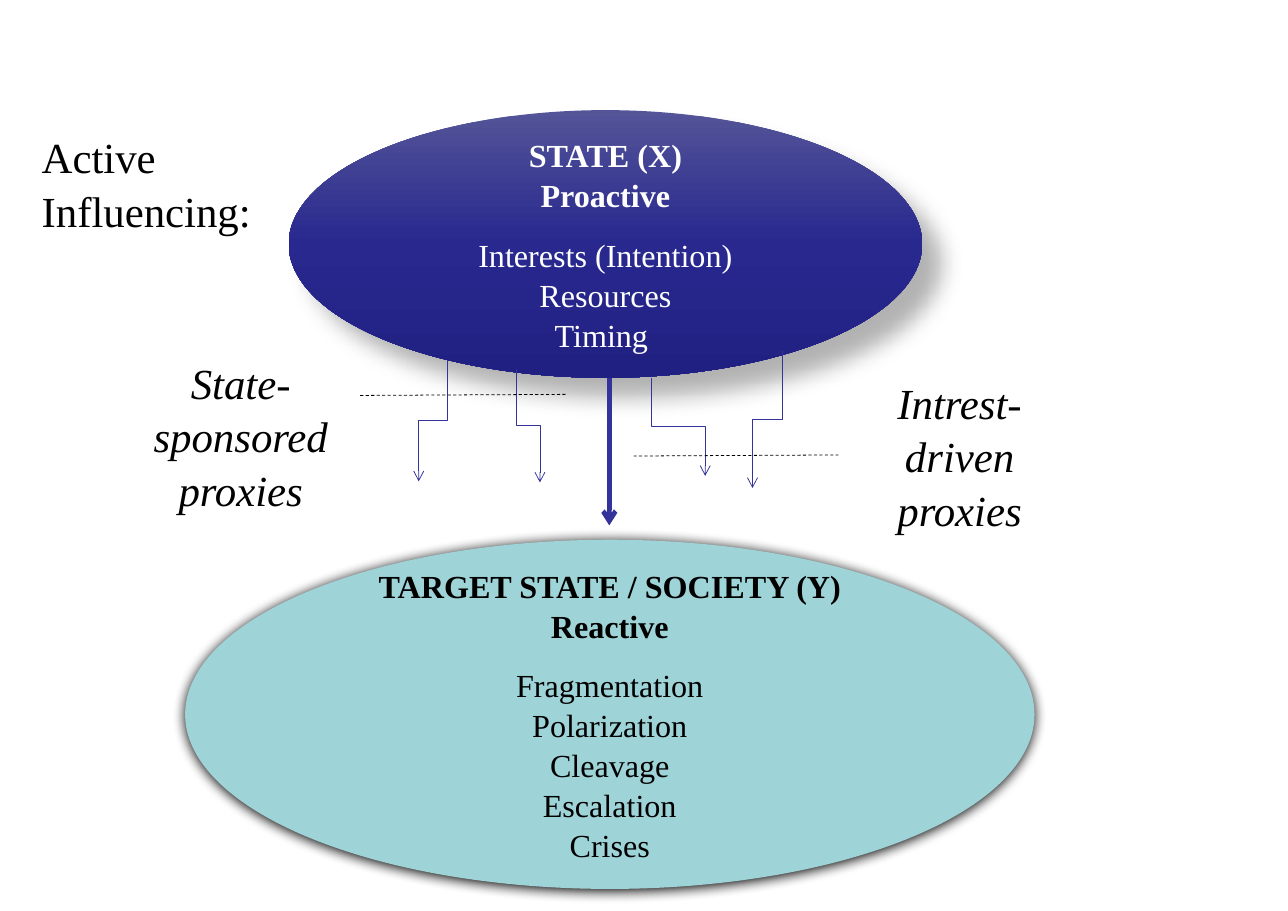
from lxml import etree
from pptx import Presentation
from pptx.dml.color import RGBColor
from pptx.enum.dml import MSO_LINE
from pptx.enum.shapes import MSO_CONNECTOR, MSO_SHAPE
from pptx.enum.text import MSO_ANCHOR, PP_ALIGN
from pptx.oxml.ns import qn
from pptx.util import Emu, Pt

PX = 9144
FONT = "Times New Roman"
BLUE, BLACK, WHITE, TEAL = "333399", "000000", "FFFFFF", "9ED3D7"
LEFT, CENTER = PP_ALIGN.LEFT, PP_ALIGN.CENTER
MIDDLE, TOP = MSO_ANCHOR.MIDDLE, MSO_ANCHOR.TOP
LINE, ELBOW = MSO_CONNECTOR.STRAIGHT, MSO_CONNECTOR.ELBOW
OVAL, DASH = MSO_SHAPE.OVAL, MSO_LINE.DASH


def px(*vals):
    """Turn px lengths into EMU."""
    return [Emu(int(val * PX)) for val in vals]


def paint(color, code):
    """Set a colour from a hex string."""
    color.rgb = RGBColor.from_string(code)


def write(par, text, size, code, bold=False, italic=False, align=CENTER):
    """Add one styled run to a paragraph."""
    par.alignment = align
    par.line_spacing = 1.04
    run = par.add_run()
    run.text = text
    font = run.font
    font.name, font.size = FONT, Pt(size)
    font.bold, font.italic = bold, italic
    paint(font.color, code)


def label(slide, box, text, italic=True, align=CENTER):
    """Add a wrapped text box."""
    frame = slide.shapes.add_textbox(*px(*box)).text_frame
    frame.word_wrap = True
    frame.vertical_anchor = TOP
    write(frame.paragraphs[0], text, 28, BLACK, italic=italic, align=align)


def shade(shape, alpha, blur, dist, angle):
    """Give a shape a soft black outer shadow."""
    shape.shadow.inherit = False
    effects = shape.element.spPr.find(qn("a:effectLst"))
    outer = etree.SubElement(effects, qn("a:outerShdw"), blurRad=str(Pt(blur)),
                             dist=str(Pt(dist)), dir=str(angle * 60000),
                             algn="ctr", rotWithShape="0")
    color = etree.SubElement(outer, qn("a:srgbClr"), val=BLACK)
    etree.SubElement(color, qn("a:alpha"), val=str(alpha * 1000))


def fade(fill, codes):
    """Fill from top to bottom through evenly spaced colours."""
    fill.gradient()
    fill.gradient_angle = 270
    stops = fill.gradient_stops
    root = etree.Element(qn("a:gsLst"))
    for num, code in enumerate(codes):
        stop = etree.SubElement(root, qn("a:gs"),
                                pos=str(num * 100000 // (len(codes) - 1)))
        etree.SubElement(stop, qn("a:srgbClr"), val=code)
    stops._gsLst[:] = root[:]


def oval(slide, box, heads, items, code):
    """Add an ellipse with bold heads above plain items."""
    shape = slide.shapes.add_shape(OVAL, *px(*box))
    shape.line.fill.background()
    frame = shape.text_frame
    frame.word_wrap = True
    frame.vertical_anchor = MIDDLE
    for num, text in enumerate(heads + items):
        par = frame.add_paragraph() if num else frame.paragraphs[0]
        write(par, text, 21, code, bold=num < len(heads))
        if num == len(heads):
            par.space_before = Pt(12.6)
    return shape


def link(slide, kind, ends, code, width, dash=None, arrow=False):
    """Add a plain connector."""
    line = slide.shapes.add_connector(kind, *px(*ends))
    paint(line.line.color, code)
    line.line.width = Pt(width)
    if dash:
        line.line.dash_style = dash
    props = line.element.spPr
    if arrow:
        etree.SubElement(props.find(qn("a:ln")), qn("a:tailEnd"), type="arrow")
    etree.SubElement(props, qn("a:effectLst"))
    return line


def bend(slide, x1, y1, x2, y2):
    """Add an elbow arrow that leaves and arrives vertically."""
    midx, midy = (x1 + x2) / 2, (y1 + y2) / 2
    long, wide = (y2 - y1) / 2, abs(x2 - x1) / 2
    ends = midx - long, midy - wide, midx + long, midy + wide
    line = link(slide, ELBOW, ends, BLUE, 0.5, arrow=True)
    frame = line.element.spPr.find(qn("a:xfrm"))
    frame.set("rot", str((270 if x2 > x1 else 90) * 60000))
    if x2 > x1:
        frame.set("flipH", "1")


def main():
    """Build the slide and save it."""
    deck = Presentation()
    deck.slide_width, deck.slide_height = px(1169, 827)
    slide = deck.slides.add_slide(deck.slide_layouts[6])

    label(slide, (28, 112, 289, 105), "Active Influencing:", False, LEFT)
    state = oval(slide, (262, 100, 575, 243), ["STATE (X)", "Proactive"],
                 ["Interests (Intention)", "Resources", "Timing "], WHITE)
    fade(state.fill, ["545498", "28288F", "202083"])
    shade(state, 30, 15, 18, 45)

    for ends in ((406, 327, 380, 437), (469, 335, 490, 438),
                 (591, 343, 640, 432), (710, 319, 683, 443)):
        bend(slide, *ends)
    link(slide, LINE, (553, 343, 553, 477), BLUE, 3, arrow=True)
    for ends in ((327, 359, 514, 358), (575, 414, 761, 413)):
        link(slide, LINE, ends, BLACK, 0.5, dash=DASH)

    target = oval(slide, (168, 490, 771, 317),
                  ["TARGET STATE / SOCIETY (Y)", "Reactive"],
                  ["Fragmentation", "Polarization", "Cleavage", "Escalation",
                   "Crises"], BLACK)
    target.fill.solid()
    paint(target.fill.fore_color, TEAL)
    shade(target, 100, 8.5, 1, 90)

    label(slide, (120, 317, 197, 151), "State-sponsored proxies")
    label(slide, (763, 335, 216, 151), "Intrest-driven proxies")
    deck.save("out.pptx")


if __name__ == "__main__":
    main()
